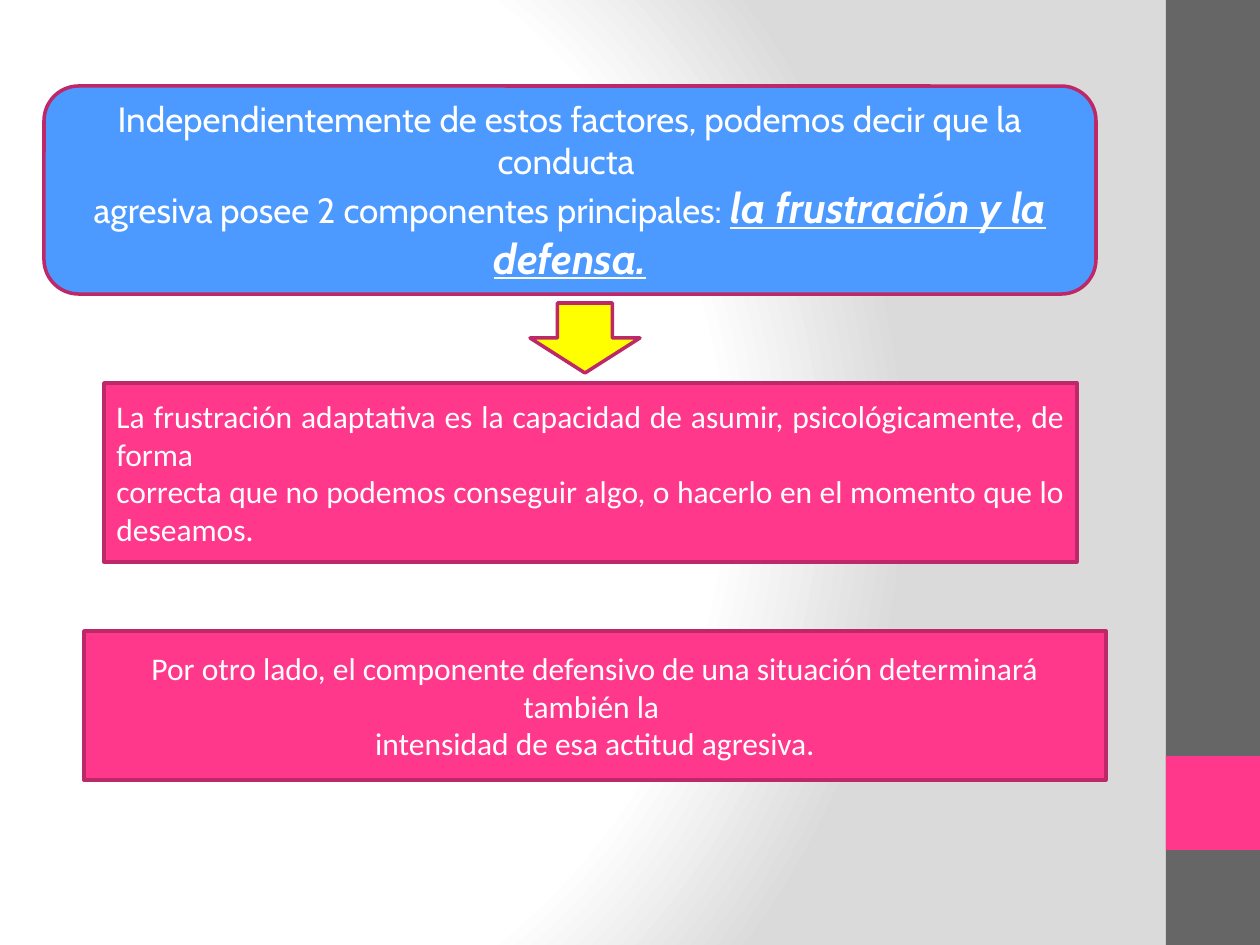
from lxml import etree
from pptx import Presentation
from pptx.dml.color import RGBColor
from pptx.enum.shapes import MSO_SHAPE
from pptx.enum.text import MSO_ANCHOR, PP_ALIGN
from pptx.oxml import parse_xml
from pptx.util import Emu, Pt

RECT, ROUNDED, DOWN = MSO_SHAPE.RECTANGLE, MSO_SHAPE.ROUNDED_RECTANGLE, MSO_SHAPE.DOWN_ARROW
CENTER, JUSTIFY = PP_ALIGN.CENTER, PP_ALIGN.JUSTIFY
MIDDLE = MSO_ANCHOR.MIDDLE
EMU_PER_PX = 914400 / 126
PINK, BORDER, WHITE = "FF388C", "BD2968", "FFFFFF"


def color(hex_code):
    return RGBColor.from_string(hex_code)


def add_block(kind, box, fill, border=None):
    """Add a flat shape; box is left, top, width, height in px."""
    block = slide.shapes.add_shape(kind, *(Emu(round(v * EMU_PER_PX)) for v in box))
    block.shadow.inherit = False
    block.fill.solid()
    block.fill.fore_color.rgb = color(fill)
    if border:
        block.line.color.rgb = color(border)
        block.line.width = Pt(2)
    else:
        block.line.fill.background()
    return block


prs = Presentation()
prs.slide_width = Emu(round(1260 * EMU_PER_PX))
prs.slide_height = Emu(round(945 * EMU_PER_PX))
slide = prs.slides.add_slide(prs.slide_layouts[6])

# Radial background: white centre fading to grey
backdrop = slide.background.fill
backdrop.gradient()
gradient = slide.element.find(".//{*}bgPr/{*}gradFill")
for part in list(gradient):
    gradient.remove(part)
stops = "".join(
    f'<a:gs pos="{percent * 1000}"><a:srgbClr val="{shade}"/></a:gs>'
    for percent, shade in ((0, WHITE), (75, WHITE), (100, "DADADA"))
)
radial = parse_xml(
    '<a:gradFill xmlns:a="http://schemas.openxmlformats.org/drawingml/2006/main">'
    f'<a:gsLst>{stops}</a:gsLst><a:path path="circle">'
    '<a:fillToRect l="20000" t="50000" r="100000" b="50000"/></a:path></a:gradFill>'
)
gradient.extend(list(radial))
etree.cleanup_namespaces(gradient)

# Side band with its accent square
add_block(RECT, (1166, 0, 94, 945), "666666")
add_block(RECT, (1166, 756, 94, 94), PINK)

# Statements: shape, box, fill, font, size, alignment, paragraphs
statements = [
    (ROUNDED, (44, 86, 1052, 208), "4C99FF", "Cabin", 20, CENTER, [
        "Independientemente de estos factores, podemos decir que la conducta ",
        "agresiva posee 2 componentes principales: ",
    ]),
    (RECT, (84, 631, 1022, 149), PINK, "Calibri", 18, CENTER, [
        "Por otro lado, el componente defensivo de una situación determinará también la ",
        "intensidad de esa actitud agresiva.",
    ]),
    (RECT, (104, 383, 973, 179), PINK, "Calibri", 18, JUSTIFY, [
        "La frustración adaptativa es la capacidad de asumir, psicológicamente, de forma ",
        "correcta que no podemos conseguir algo, o hacerlo en el momento que lo ",
        "deseamos.",
    ]),
]
frames = []
for kind, box, fill, font, size, alignment, lines in statements:
    frame = add_block(kind, box, fill, BORDER).text_frame
    frame.word_wrap = True
    frame.vertical_anchor = MIDDLE
    frame.text = "\n".join(lines)
    for paragraph in frame.paragraphs:
        paragraph.alignment = alignment
        paragraph.font.name = font
        paragraph.font.size = Pt(size)
        paragraph.font.color.rgb = color(WHITE)
    frames.append(frame)

components = frames[0].paragraphs[-1].add_run()
components.text = "la frustración y la defensa."
components.font.size = Pt(24)
components.font.bold = components.font.italic = components.font.underline = True

add_block(DOWN, (530, 303, 110, 70), "FFFF00", BORDER)

prs.save("out.pptx")
